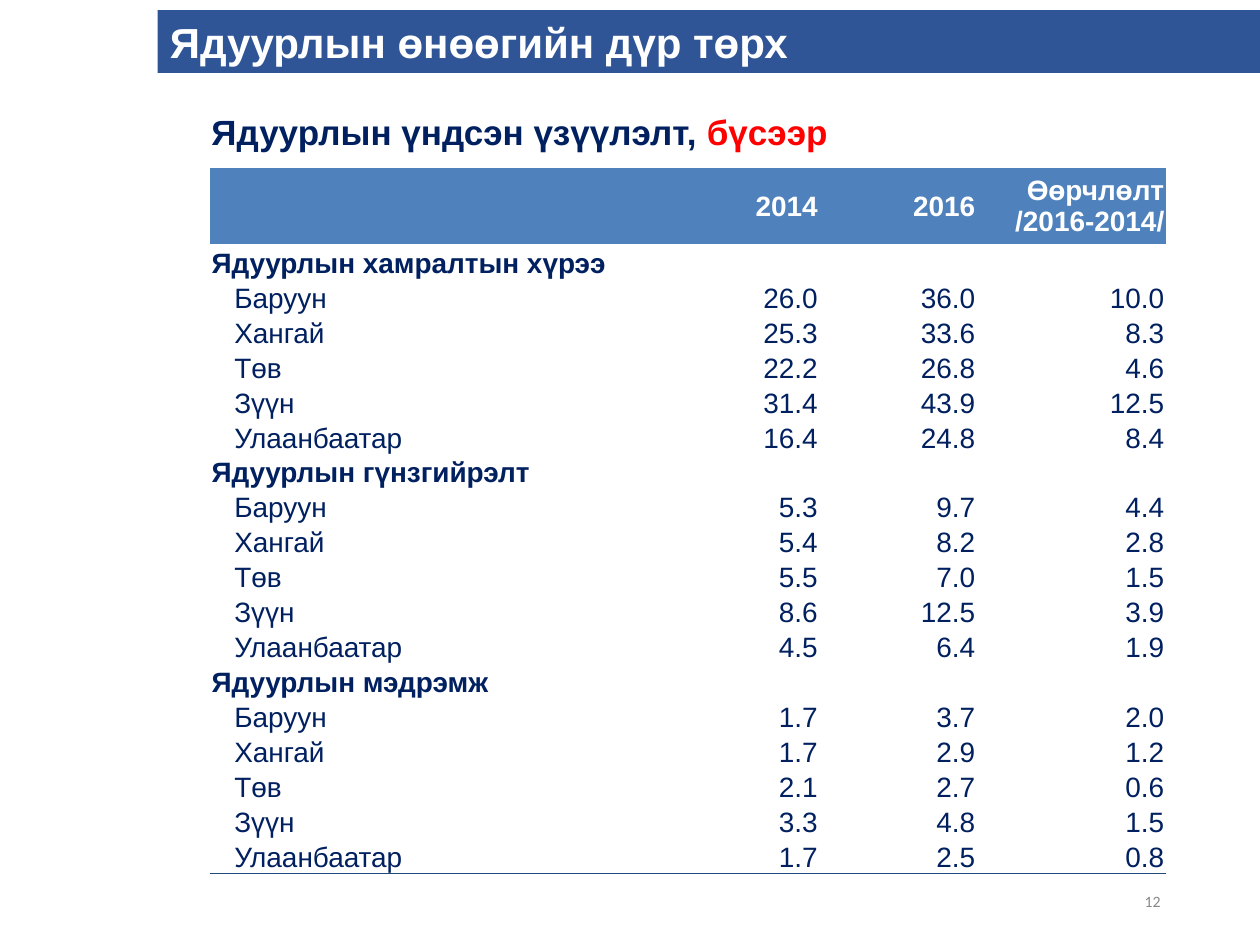
from dataclasses import dataclass

from lxml import etree
from pptx import Presentation
from pptx import util as u
from pptx.dml.color import RGBColor
from pptx.enum import shapes, text
from pptx.oxml import ns


@dataclass(frozen=True)
class Theme:
    font: str = "Arial"
    number_font: str = "Calibri"
    white: str = "FFFFFF"
    navy: str = "002060"
    red: str = "FF0000"
    gray: str = "898989"
    banner: str = "2F5597"
    header: str = "4F81BD"
    rule: str = "1F497D"
    title_size: int = 24
    subtitle_size: int = 20
    table_size: int = 16
    number_size: int = 9


THEME = Theme()
NO_STYLE = "{2D5ABB26-0587-4C30-8999-92F81FD0307C}"
COLUMN_WIDTHS = (3.58, 1.25, 1.25, 1.5)
HEADER_HEIGHT, TABLE_HEIGHT = 0.61, 5.6
HEADINGS = ("", "2014", "2016", "Өөрчлөлт /2016-2014/")
REGIONS = ("Баруун", "Хангай", "Төв", "Зүүн", "Улаанбаатар")
SECTIONS = {
    "Ядуурлын хамралтын хүрээ": (
        ("26.0", "36.0", "10.0"), ("25.3", "33.6", "8.3"), ("22.2", "26.8", "4.6"),
        ("31.4", "43.9", "12.5"), ("16.4", "24.8", "8.4")),
    "Ядуурлын гүнзгийрэлт": (
        ("5.3", "9.7", "4.4"), ("5.4", "8.2", "2.8"), ("5.5", "7.0", "1.5"),
        ("8.6", "12.5", "3.9"), ("4.5", "6.4", "1.9")),
    "Ядуурлын мэдрэмж": (
        ("1.7", "3.7", "2.0"), ("1.7", "2.9", "1.2"), ("2.1", "2.7", "0.6"),
        ("3.3", "4.8", "1.5"), ("1.7", "2.5", "0.8")),
}


def inches(*lengths):
    return [u.Inches(length) for length in lengths]


def style_font(font, size, color, bold=False, name=THEME.font):
    font.name, font.size, font.bold = name, u.Pt(size), bold
    font.color.rgb = RGBColor.from_string(color)


def add_banner(slide, title):
    banner = slide.shapes.add_shape(shapes.MSO_SHAPE.RECTANGLE, *inches(1.25, 0.08, 8.75, 0.5))
    banner.shadow.inherit = False
    banner.fill.solid()
    banner.fill.fore_color.rgb = RGBColor.from_string(THEME.banner)
    banner.line.fill.background()
    frame = banner.text_frame
    frame.vertical_anchor = text.MSO_ANCHOR.TOP
    paragraph = frame.paragraphs[0]
    paragraph.text = title
    paragraph.alignment = text.PP_ALIGN.LEFT
    style_font(paragraph.font, THEME.title_size, THEME.white, bold=True)


def add_text_box(slide, box):
    """Add a wrapping text box and return its frame."""
    frame = slide.shapes.add_textbox(*inches(*box)).text_frame
    frame.word_wrap = True
    return frame


def add_subtitle(slide, *colored_parts):
    paragraph = add_text_box(slide, (1.58, 0.83, 7.33, 0.44)).paragraphs[0]
    for words, color in colored_parts:
        run = paragraph.add_run()
        run.text = words
        style_font(run.font, THEME.subtitle_size, color, bold=True)


def add_slide_number(slide, number):
    frame = add_text_box(slide, (7.06, 6.95, 2.25, 0.4))
    frame.vertical_anchor = text.MSO_ANCHOR.MIDDLE
    paragraph = frame.paragraphs[0]
    paragraph.text = number
    paragraph.alignment = text.PP_ALIGN.RIGHT
    style_font(paragraph.font, THEME.number_size, THEME.gray, name=THEME.number_font)


def set_border(cell, side, color):
    """Draw a half-point border; borders must come before the cell's fill."""
    border = etree.SubElement(cell._tc.get_or_add_tcPr(), ns.qn(f"a:{side}"), w=str(u.Pt(0.5)))
    fill = etree.SubElement(border, ns.qn("a:solidFill"))
    etree.SubElement(fill, ns.qn("a:srgbClr"), val=color)


def fill_row(row, values, color, fill, anchor, bold=False, indent=0.01, borders=()):
    for column, (cell, value) in enumerate(zip(row.cells, values)):
        for side, border_color in borders:
            set_border(cell, side, border_color)
        cell.fill.solid()
        cell.fill.fore_color.rgb = RGBColor.from_string(fill)
        cell.vertical_anchor = anchor
        cell.margin_left = u.Inches(0.01 if column else indent)
        cell.margin_top = cell.margin_right = u.Inches(0.01)
        cell.margin_bottom = 0
        paragraph = cell.text_frame.paragraphs[0]
        paragraph.text = value
        paragraph.alignment = text.PP_ALIGN.RIGHT if column else text.PP_ALIGN.LEFT
        style_font(paragraph.font, THEME.table_size, color, bold)
        if not value:
            # An empty cell takes its line height from the paragraph end mark.
            etree.SubElement(paragraph._p, ns.qn("a:endParaRPr"), sz=str(THEME.table_size * 100))


def add_poverty_table(slide):
    row_count = 1 + len(SECTIONS) * (1 + len(REGIONS))
    frame = slide.shapes.add_table(row_count, len(COLUMN_WIDTHS),
                                   *inches(1.67, 1.33, sum(COLUMN_WIDTHS), TABLE_HEIGHT))
    table = frame.table
    table._tbl.tblPr.find(ns.qn("a:tableStyleId")).text = NO_STYLE
    table.horz_banding = False
    for column, width in zip(table.columns, COLUMN_WIDTHS):
        column.width = u.Inches(width)
    body_height = (TABLE_HEIGHT - HEADER_HEIGHT) / (row_count - 1)
    for index, row in enumerate(table.rows):
        row.height = u.Inches(body_height if index else HEADER_HEIGHT)

    rows = iter(table.rows)
    top, bottom = ("lnT", THEME.white), ("lnB", THEME.white)
    fill_row(next(rows), HEADINGS, THEME.white, THEME.header, text.MSO_ANCHOR.MIDDLE,
             bold=True, borders=(top, bottom))
    body = (THEME.navy, THEME.white, text.MSO_ANCHOR.BOTTOM)
    last_section = list(SECTIONS)[-1]
    for section, figures in SECTIONS.items():
        fill_row(next(rows), (section, "", "", ""), *body, bold=True, borders=(top,))
        for region, values in zip(REGIONS, figures):
            borders = ()
            if region == REGIONS[-1]:
                borders = (("lnB", THEME.rule),) if section == last_section else (bottom,)
            fill_row(next(rows), (region, *values), *body, indent=0.19, borders=borders)


def main():
    presentation = Presentation()
    presentation.slide_width, presentation.slide_height = inches(10, 7.5)
    slide = presentation.slides.add_slide(presentation.slide_layouts[6])
    add_slide_number(slide, "12")
    add_banner(slide, "Ядуурлын өнөөгийн дүр төрх")
    add_subtitle(slide, ("Ядуурлын үндсэн үзүүлэлт, ", THEME.navy), ("бүсээр", THEME.red))
    add_poverty_table(slide)
    presentation.save("out.pptx")


if __name__ == "__main__":
    main()
